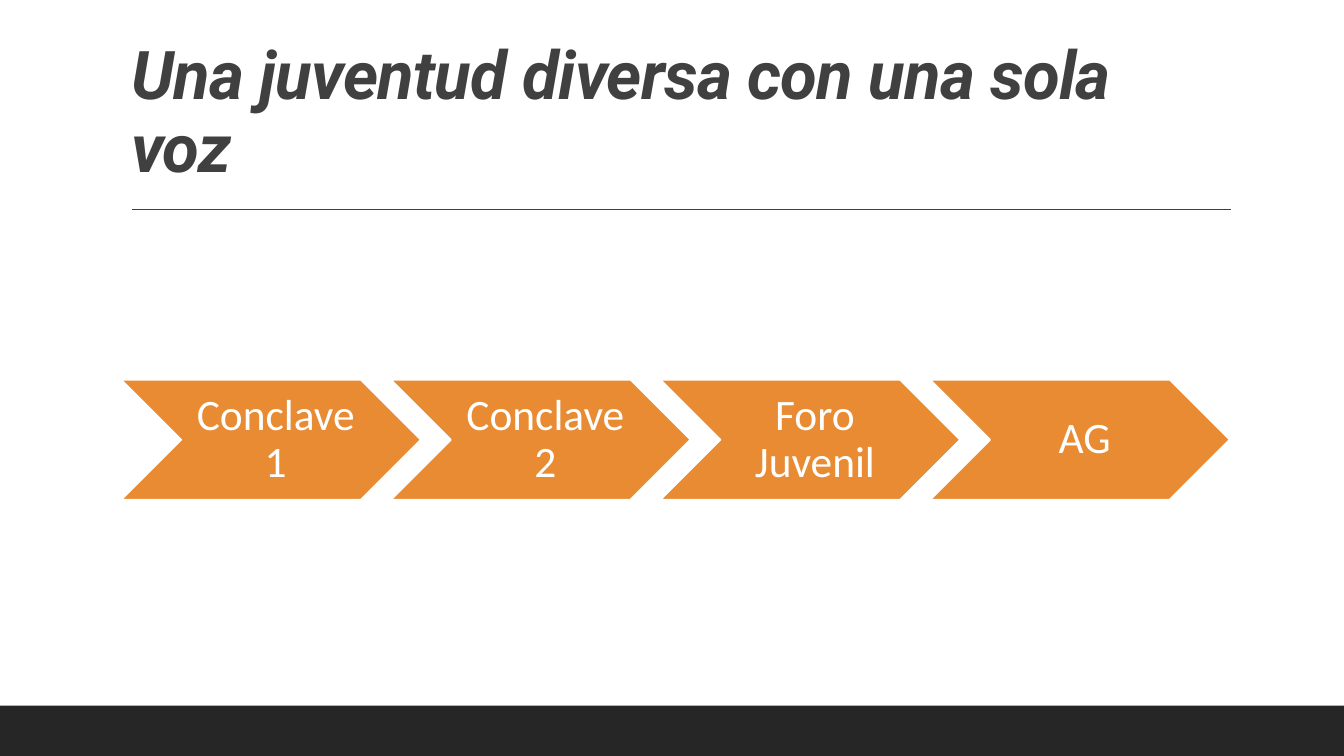
from dataclasses import dataclass

from lxml import etree
from pptx import Presentation
from pptx.dml.color import RGBColor
from pptx.enum import shapes, text
from pptx.oxml import ns
from pptx.util import Pt


@dataclass(frozen=True)
class Theme:
    dark: str = "262626"
    gray: str = "404040"
    orange: str = "E88B33"
    white: str = "FFFFFF"
    head: int = 48
    body: int = 31


THEME = Theme()
STEPS = ["Conclave 1", "Conclave 2", "Foro Juvenil", "AG"]


def rgb(code):
    return RGBColor.from_string(code)


def write(shape, words, *, font, size, color, align, anchor,
          bold=False, slant=False, track=0, pads=(7.2, 3.6, 7.2, 3.6)):
    frame = shape.text_frame
    frame.word_wrap = True
    frame.vertical_anchor = anchor
    (frame.margin_left, frame.margin_top,
     frame.margin_right, frame.margin_bottom) = map(Pt, pads)
    para = frame.paragraphs[0]
    para.alignment = align
    para.line_spacing = 0.9
    run = para.add_run()
    run.text = words
    run.font.name = font
    run.font.size = Pt(size)
    run.font.color.rgb = rgb(color)
    run.font.bold = bold
    run.font.italic = slant
    if track:
        run.font._element.set("spc", str(round(track * 100)))


def block(slide, kind, box, fill, edge=None):
    shape = slide.shapes.add_shape(kind, *map(Pt, box))
    shape.shadow.inherit = False
    shape.fill.solid()
    shape.fill.fore_color.rgb = rgb(fill)
    if edge:
        shape.line.color.rgb = rgb(edge)
        shape.line.width = Pt(1.25)
    else:
        shape.line.fill.background()
    return shape


def rule(slide, left, right, top):
    line = slide.shapes.add_connector(
        shapes.MSO_CONNECTOR.STRAIGHT, Pt(left), Pt(top), Pt(right), Pt(top))
    line.line.color.rgb = rgb(THEME.gray)
    line.line.width = Pt(1)
    etree.SubElement(line._element.spPr, ns.qn("a:effectLst"))


def title(slide, words):
    box = slide.shapes.add_textbox(Pt(86.6), Pt(22.6), Pt(792), Pt(114.2))
    write(box, words, font="Roboto", size=THEME.head, color=THEME.gray,
          align=text.PP_ALIGN.LEFT, anchor=text.MSO_ANCHOR.BOTTOM,
          bold=True, slant=True, track=-0.5)


def chain(slide, steps, left=86.6, top=271.3, wide=214, high=85.6, pitch=192.6):
    for i, step in enumerate(steps):
        box = (left + i * pitch, top, wide, high)
        arrow = block(slide, shapes.MSO_SHAPE.CHEVRON, box,
                      THEME.orange, THEME.white)
        write(arrow, step, font="Calibri", size=THEME.body, color=THEME.white,
              align=text.PP_ALIGN.CENTER, anchor=text.MSO_ANCHOR.MIDDLE,
              pads=(10, 3.4, 3.4, 3.4))


def main():
    deck = Presentation()
    deck.slide_width, deck.slide_height = Pt(960), Pt(540)
    slide = deck.slides.add_slide(deck.slide_layouts[6])
    block(slide, shapes.MSO_SHAPE.RECTANGLE, (0, 504, 960, 36), THEME.dark)
    rule(slide, 94, 879, 149.5)
    title(slide, "Una juventud diversa con una sola voz")
    chain(slide, STEPS)
    deck.save("out.pptx")


if __name__ == "__main__":
    main()
